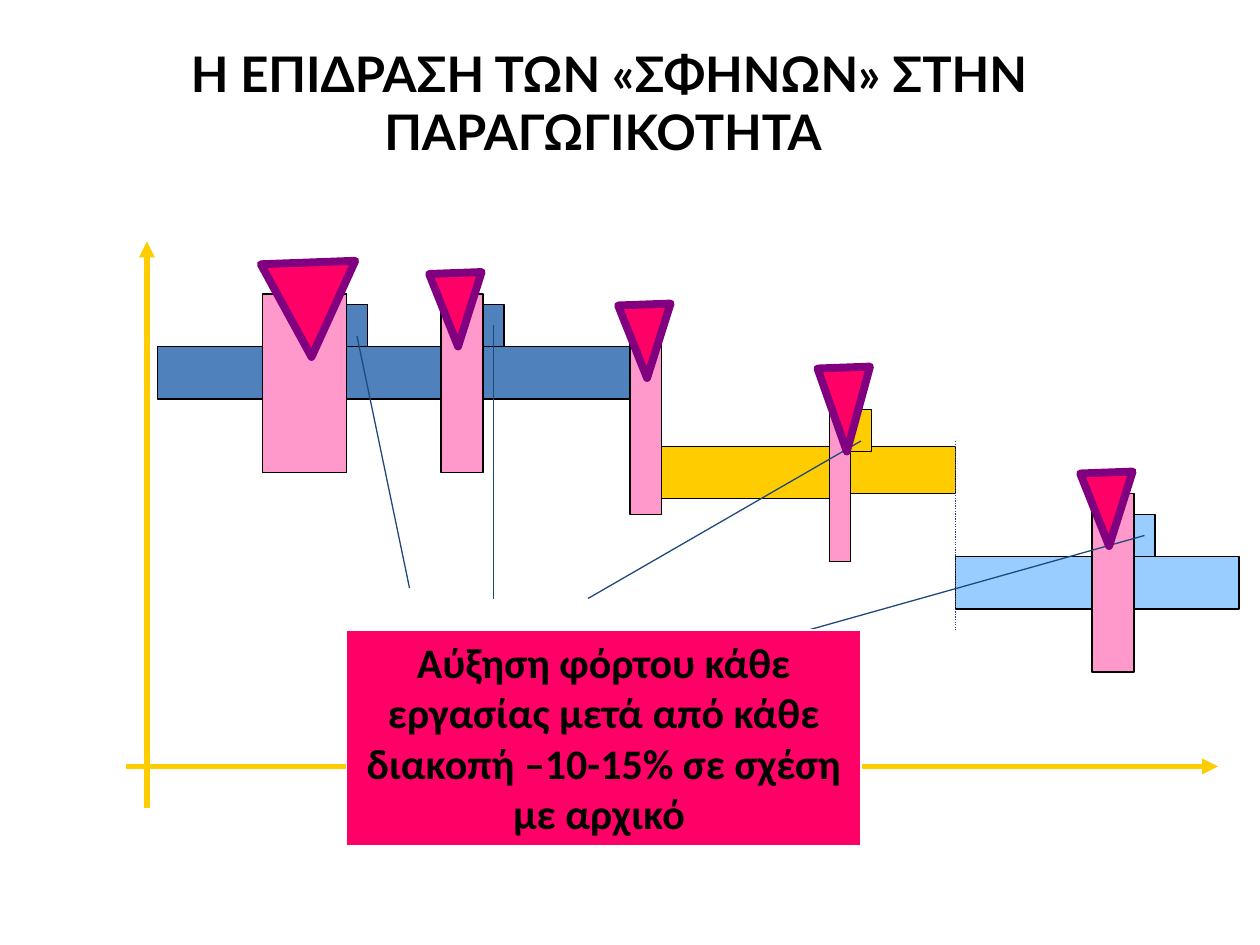
from lxml import etree
from pptx import Presentation
from pptx.dml.color import RGBColor
from pptx.enum.dml import MSO_LINE
from pptx.enum.shapes import MSO_CONNECTOR, MSO_SHAPE
from pptx.enum.text import MSO_ANCHOR, MSO_AUTO_SIZE, PP_ALIGN
from pptx.oxml.ns import qn
from pptx.util import Inches, Pt

RECT, TRIANGLE = MSO_SHAPE.RECTANGLE, MSO_SHAPE.ISOSCELES_TRIANGLE
STRAIGHT, DOTTED = MSO_CONNECTOR.STRAIGHT, MSO_LINE.ROUND_DOT
TOP, CENTER, NO_FIT = MSO_ANCHOR.TOP, PP_ALIGN.CENTER, MSO_AUTO_SIZE.NONE
COLUMNS, ROWS = 120, 90
BLACK, WHITE, NAVY = "000000", "FFFFFF", "1F497D"
BLUE, GOLD, SKY = "4F81BD", "FFCC00", "99CCFF"
PINK, MAGENTA, PURPLE = "FF99CC", "FF0066", "800080"


def rgb(value):
    return RGBColor.from_string(value)


class Diagram:
    def __init__(self, prs):
        self.cell_w = prs.slide_width / COLUMNS
        self.cell_h = prs.slide_height / ROWS
        self.s = prs.slides.add_slide(prs.slide_layouts[5])

    def grid(self, col, row):
        return round(col * self.cell_w), round(row * self.cell_h)

    def text(self, sp, text, size, font):
        tf = sp.text_frame
        tf.text = text
        tf.word_wrap = True
        tf.auto_size = NO_FIT
        tf.vertical_anchor = TOP
        p = tf.paragraphs[0]
        p.alignment = CENTER
        p.font.size = Pt(size)
        p.font.name = font
        p.font.bold = True
        p.font.color.rgb = rgb(BLACK)

    def title(self, text, col, row, cols, rows):
        sp = self.s.shapes.title
        sp.left, sp.top = self.grid(col, row)
        sp.width, sp.height = self.grid(cols, rows)
        self.text(sp, text, 28, "Lato")

    def shape(self, kind, box, fill, line=BLACK, weight=0.75):
        col, row, cols, rows = box
        sp = self.s.shapes.add_shape(kind, *self.grid(col, row), *self.grid(cols, rows))
        sp.shadow.inherit = False
        sp.fill.solid()
        sp.fill.fore_color.rgb = rgb(fill)
        sp.line.color.rgb = rgb(line)
        sp.line.width = Pt(weight)
        return sp

    def wedge(self, box):
        self.shape(TRIANGLE, box, MAGENTA, PURPLE, 4.5).rotation = 177.9

    def callout(self, text, box):
        self.text(self.shape(RECT, box, MAGENTA, WHITE), text, 24, "Calibri")

    def line(self, start, end, color=NAVY, weight=0.75):
        cn = self.s.shapes.add_connector(STRAIGHT, *self.grid(*start), *self.grid(*end))
        cn.line.color.rgb = rgb(color)
        cn.line.width = Pt(weight)
        etree.SubElement(cn._element.spPr, qn("a:effectLst"))
        return cn

    def axis(self, start, end):
        cn = self.line(start, end, GOLD, 3)
        etree.SubElement(cn.line._get_or_add_ln(), qn("a:tailEnd"), type="triangle")


def main():
    prs = Presentation()
    prs.slide_width, prs.slide_height = Inches(10), Inches(7.5)
    d = Diagram(prs)
    d.title("Η ΕΠΙΔΡΑΣΗ ΤΩΝ «ΣΦΗΝΩΝ» ΣΤΗΝ ΠΑΡΑΓΩΓΙΚΟΤΗΤΑ ", 0, 3.5, 116, 12.4)
    d.axis((12, 73), (116, 73))
    d.axis((14, 77), (14, 23))

    tasks = [
        (15, 33, 27, 5, BLUE), (46, 33, 14, 5, BLUE),
        (63, 42.5, 16, 5, GOLD), (81, 42.5, 10, 4.5, GOLD),
        (91, 53, 27, 5, SKY),
    ]
    interruptions = [(42, 28, 4), (60, 32, 3), (79, 36.5, 2), (104, 47, 4), (25, 28, 8)]
    increases = [(46, 29, BLUE), (33, 29, BLUE), (81, 39, GOLD), (108, 49, SKY)]
    for *box, color in tasks:
        d.shape(RECT, box, color)
    for col, row, cols in interruptions:
        d.shape(RECT, (col, row, cols, 17), PINK)
    for col, row, color in increases:
        d.shape(RECT, (col, row, 2, 4), color)

    d.line((91, 42), (91, 60)).line.dash_style = DOTTED
    leaders = [
        ((34, 32), (39, 56)), ((47, 31), (47, 57)),
        ((82, 42), (56, 57)), ((109, 51), (77, 60)),
    ]
    for start, end in leaders:
        d.line(start, end)

    d.callout(
        "Αύξηση φόρτου κάθε εργασίας μετά από κάθε διακοπή –10-15% σε σχέση με αρχικό ",
        (33, 60, 49, 20.5),
    )
    wedges = [(25, 25, 9, 9), (59, 29, 5, 7), (41, 26, 5, 7), (103, 45, 5, 7), (78, 35, 5, 8)]
    for box in wedges:
        d.wedge(box)
    prs.save("out.pptx")


if __name__ == "__main__":
    main()
